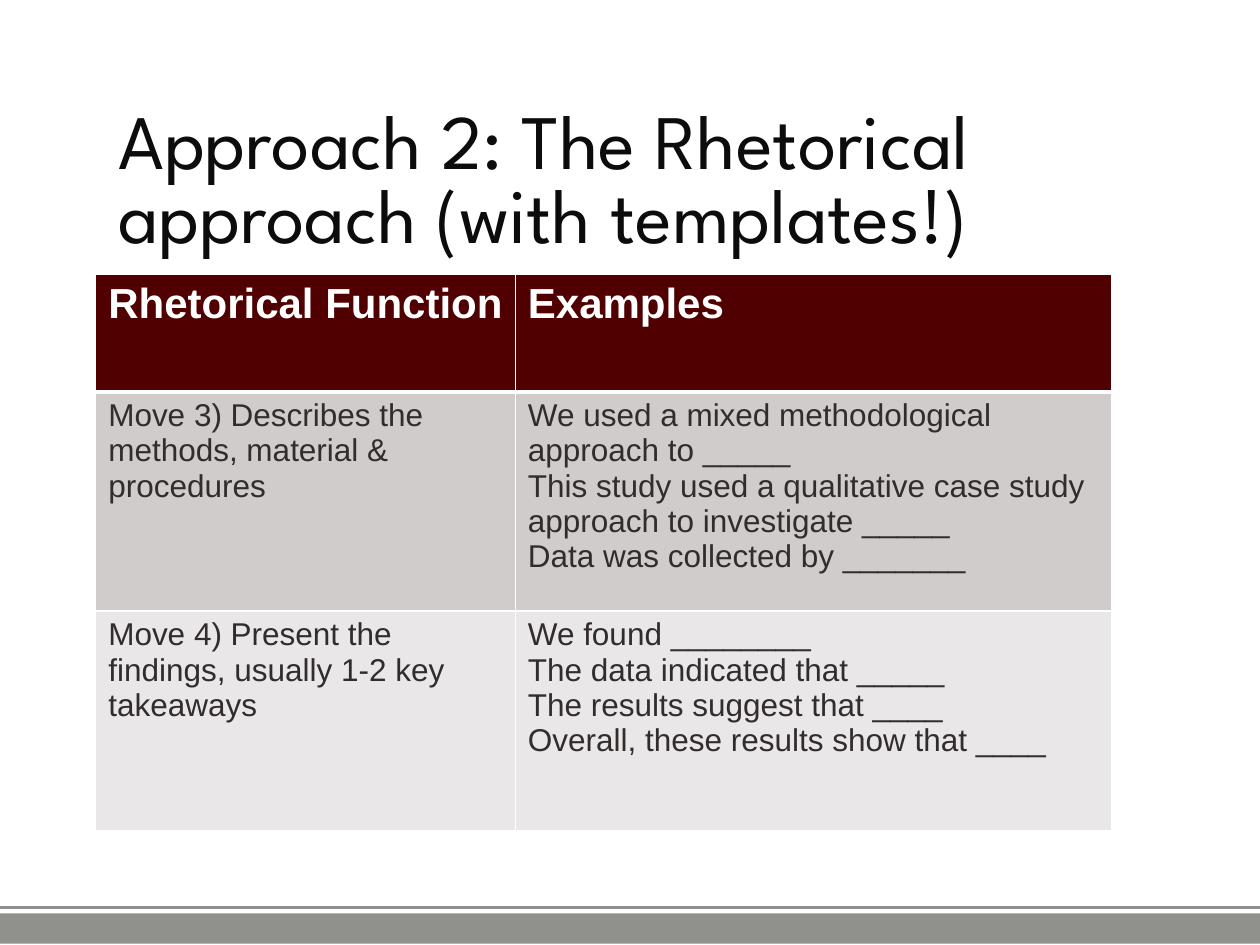
"""Build a slide with a table of rhetorical moves and sentence templates."""
from lxml import etree
from pptx import Presentation
from pptx import util as u
from pptx.dml.color import RGBColor
from pptx.enum import shapes, text
from pptx.oxml.ns import qn

COLORS = {
    "white": "FFFFFF", "bar": "90908C", "title": "0C0C0C", "header": "500000",
    "body": "332C2C", "dark band": "D0CCCC", "light band": "E9E7E7",
}
ROWS = [
    (["Rhetorical Function"], ["Examples"]),
    (["Move 3) Describes the methods, material & procedures"],
     ["We used a mixed methodological approach to _____",
      "This study used a qualitative case study approach to investigate _____",
      "Data was collected by _______"]),
    (["Move 4) Present the findings, usually 1-2 key takeaways"],
     ["We found ________",
      "The data indicated that _____",
      "The results suggest that ____",
      "Overall, these results show that ____"]),
]


def color(name):
    """Return the named colour."""
    return RGBColor.from_string(COLORS[name])


def write(frame, lines, font="Arial", size=18, ink="body", bold=False, spacing=None):
    """Fill a text frame with one paragraph per line."""
    for index, line in enumerate(lines):
        paragraph = frame.paragraphs[0] if index == 0 else frame.add_paragraph()
        paragraph.line_spacing = spacing
        run = paragraph.add_run()
        run.text = line
        run.font.name = font
        run.font.size = u.Pt(size)
        run.font.bold = bold
        run.font.color.rgb = color(ink)


class SlideBuilder:
    """Draw elements on a slide in a grid of 100 columns and 75 rows."""

    def __init__(self, presentation):
        """Add a blank slide and measure one grid unit."""
        self.slide = presentation.slides.add_slide(presentation.slide_layouts[6])
        self.unit = presentation.slide_width / 100

    def grid(self, *values):
        """Turn grid units into lengths."""
        return [u.Emu(round(value * self.unit)) for value in values]

    def bar(self, *box):
        """Draw a plain filled bar."""
        shape = self.slide.shapes.add_shape(shapes.MSO_SHAPE.RECTANGLE, *self.grid(*box))
        shape.shadow.inherit = False
        shape.fill.solid()
        shape.fill.fore_color.rgb = color("bar")
        shape.line.fill.background()

    def rule(self, row):
        """Draw a line across the slide."""
        line = self.slide.shapes.add_connector(
            shapes.MSO_CONNECTOR.STRAIGHT, *self.grid(0, row, 100, row))
        line.line.color.rgb = color("bar")
        line.line.width = u.Pt(1.5)
        etree.SubElement(line._element.spPr, qn("a:effectLst"))

    def title(self, words, *box):
        """Write the slide title."""
        frame = self.slide.shapes.add_textbox(*self.grid(*box)).text_frame
        frame.word_wrap = True
        frame.vertical_anchor = text.MSO_ANCHOR.MIDDLE
        frame.margin_left = frame.margin_right = u.Inches(0.1)
        frame.margin_top = frame.margin_bottom = u.Inches(0.1)
        write(frame, [words], font="League Spartan", size=44, ink="title", spacing=0.8)

    def border(self, cell, **widths):
        """Give each named cell edge a white line."""
        properties = cell._tc.get_or_add_tcPr()
        for index, (edge, width) in enumerate(widths.items()):
            line = etree.Element(qn(f"a:ln{edge}"), w=str(u.Pt(width)))
            fill = etree.SubElement(line, qn("a:solidFill"))
            etree.SubElement(fill, qn("a:srgbClr"), val=COLORS["white"])
            properties.insert(index, line)

    def table(self, rows, left, top, widths, heights):
        """Draw a table with a header row and banded body rows."""
        box = self.grid(left, top, sum(widths), sum(heights))
        table = self.slide.shapes.add_table(len(rows), len(widths), *box).table
        for column, width in zip(table.columns, self.grid(*widths)):
            column.width = width
        for row, height in zip(table.rows, self.grid(*heights)):
            row.height = height
        for row_index, row in enumerate(rows):
            header = row_index == 0
            band = "header" if header else "dark band" if row_index % 2 else "light band"
            style = dict(size=24, ink="white", bold=True) if header else {}
            for column_index, lines in enumerate(row):
                cell = table.cell(row_index, column_index)
                cell.fill.solid()
                cell.fill.fore_color.rgb = color(band)
                write(cell.text_frame, lines, **style)
                self.border(cell, L=1, R=1, T=3 if row_index == 1 else 1, B=3 if header else 1)


def main():
    """Build and save the presentation."""
    presentation = Presentation()
    presentation.slide_width = u.Inches(10)
    presentation.slide_height = u.Inches(7.5)
    builder = SlideBuilder(presentation)
    builder.bar(0, 72.5, 100, 2.4)
    builder.rule(72)
    builder.title("Approach 2: The Rhetorical approach (with templates!)", 8.4, 6.4, 79.7, 16.4)
    builder.table(ROWS, 7.6, 21.8, widths=[33.3, 47.3], heights=[9.3, 17.4, 17.4])
    presentation.save("out.pptx")


if __name__ == "__main__":
    main()
